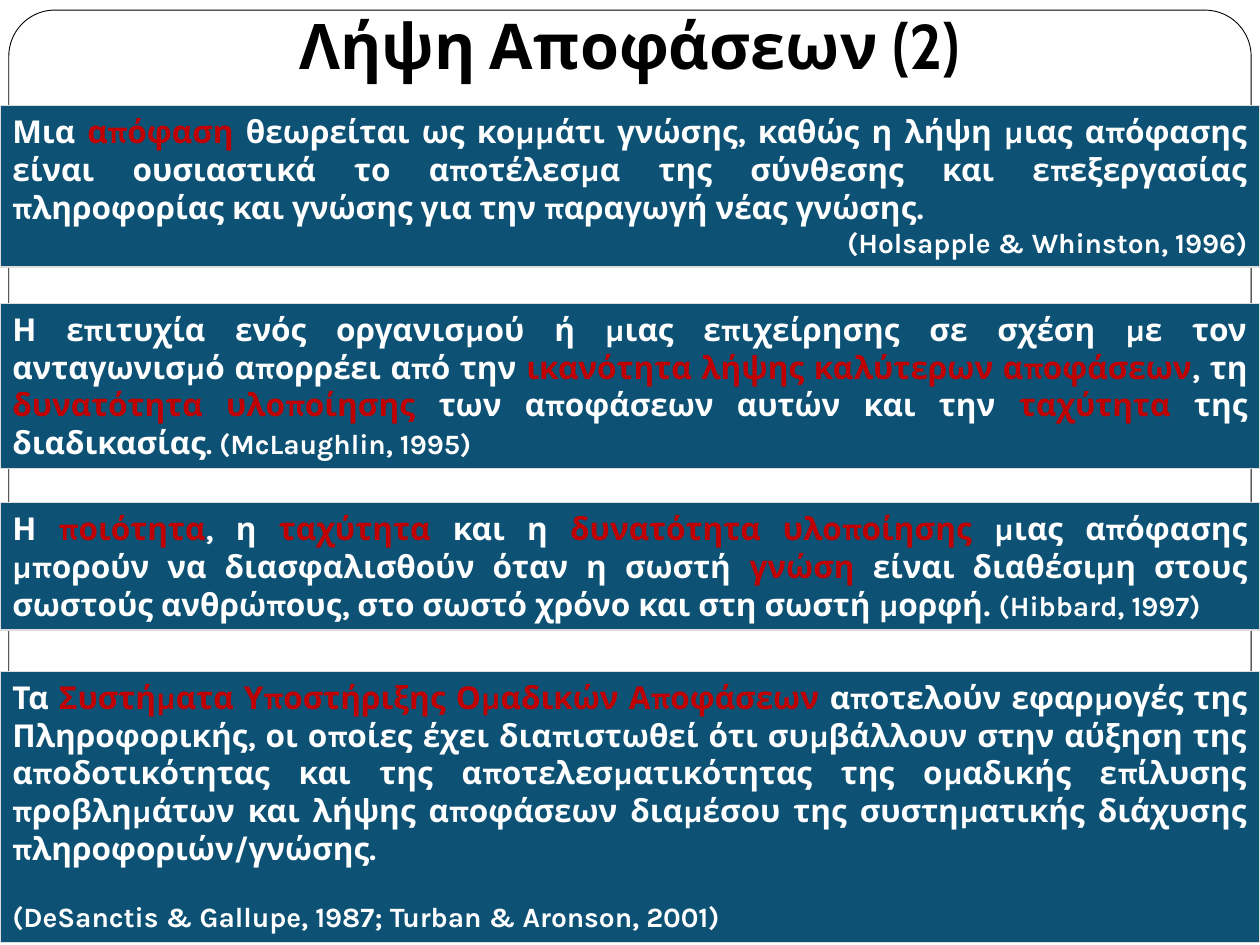
from pptx import Presentation
from pptx.dml.color import RGBColor
from pptx.enum.shapes import MSO_SHAPE
from pptx.enum.text import MSO_ANCHOR, MSO_AUTO_SIZE, PP_ALIGN
from pptx.util import Inches, Pt

BLACK = RGBColor(0x00, 0x00, 0x00)
WHITE = RGBColor(0xFF, 0xFF, 0xFF)
RED = RGBColor(0xC0, 0x00, 0x00)
BLUE = RGBColor(0x0D, 0x52, 0x75)
GREY = RGBColor(0xDD, 0xDD, 0xDD)

deck = Presentation()
deck.slide_width, deck.slide_height = Inches(10), Inches(7.5)
percent_x, percent_y = deck.slide_width / 100, deck.slide_height / 100
slide = deck.slides.add_slide(deck.slide_layouts[5])


def add_panel(kind, left, top, width, height, fill, line, weight):
    """Add a plain outlined shape, placed in percent of the slide's size."""
    panel = slide.shapes.add_shape(
        kind, round(left * percent_x), round(top * percent_y),
        round(width * percent_x), round(height * percent_y))
    panel.shadow.inherit = False
    panel.fill.solid()
    panel.fill.fore_color.rgb = fill
    panel.line.color.rgb = line
    panel.line.width = Pt(weight)
    return panel


def add_run(paragraph, text, size, color, face="Karla"):
    run = paragraph.add_run()
    run.text = text
    run.font.name = face
    run.font.size = Pt(size)
    run.font.bold = True
    run.font.color.rgb = color


# Rounded frame, sent behind the title
frame = add_panel(MSO_SHAPE.ROUNDED_RECTANGLE, 0.7, 1.07, 98.6, 97.6, WHITE, BLACK, 0.5)
frame.adjustments[0] = 0.05
slide.shapes._spTree.insert(2, frame._element)

title = slide.shapes.title
title.left, title.top = 0, round(4.27 * percent_y)
title.width, title.height = deck.slide_width, round(5.73 * percent_y)
heading = title.text_frame
heading.auto_size = MSO_AUTO_SIZE.NONE
heading.vertical_anchor = MSO_ANCHOR.BOTTOM
heading.margin_bottom = Inches(0.1)
heading.paragraphs[0].alignment = PP_ALIGN.CENTER
add_run(heading.paragraphs[0], "Λήψη Αποφάσεων (2)", 36, BLACK, "Cabin")

# Top, height, phrases (plain and highlighted in turn), citation,
# citation alignment (None keeps it in the sentence), space above it
statements = [
    (11.2, 17.07,
     ["Μια ", "απόφαση",
      " θεωρείται ως κομμάτι γνώσης, καθώς η λήψη μιας απόφασης είναι ουσιαστικά "
      "το αποτέλεσμα της σύνθεσης και επεξεργασίας πληροφορίας και γνώσης για την "
      "παραγωγή νέας γνώσης. "],
     "(Holsapple & Whinston, 1996)", PP_ALIGN.RIGHT, 0),
    (32.13, 17.47,
     ["Η επιτυχία ενός οργανισμού ή μιας επιχείρησης σε σχέση με τον ανταγωνισμό "
      "απορρέει από την ", "ικανότητα λήψης καλύτερων αποφάσεων",
      ", τη ", "δυνατότητα υλοποίησης",
      " των αποφάσεων αυτών και την ", "ταχύτητα",
      " της διαδικασίας"],
     ". (McLaughlin, 1995)", None, 0),
    (53.2, 13.47,
     ["Η ", "ποιότητα", ", η ", "ταχύτητα", " και η ", "δυνατότητα υλοποίησης",
      " μιας απόφασης μπορούν να διασφαλισθούν όταν η σωστή ", "γνώση",
      " είναι διαθέσιμη στους σωστούς ανθρώπους, στο σωστό χρόνο και στη σωστή "
      "μορφή. "],
     "(Hibbard, 1997)", None, 0),
    (71.07, 28.67,
     ["Τα ", "Συστήματα Υποστήριξης Ομαδικών Αποφάσεων ",
      "αποτελούν εφαρμογές της Πληροφορικής, οι οποίες έχει διαπιστωθεί ότι "
      "συμβάλλουν στην αύξηση της αποδοτικότητας και της αποτελεσματικότητας της "
      "ομαδικής επίλυσης προβλημάτων και λήψης αποφάσεων διαμέσου της "
      "συστηματικής διάχυσης πληροφοριών/γνώσης."],
     "(DeSanctis & Gallupe, 1987; Turban & Aronson, 2001)", PP_ALIGN.JUSTIFY, 18.7),
]

for top, height, phrases, citation, citation_align, space_above in statements:
    band = add_panel(MSO_SHAPE.RECTANGLE, 0, top, 100, height, BLUE, GREY, 0.75)
    body = band.text_frame
    body.word_wrap = True
    body.auto_size = MSO_AUTO_SIZE.SHAPE_TO_FIT_TEXT
    body.vertical_anchor = MSO_ANCHOR.TOP
    sentence = body.paragraphs[0]
    sentence.alignment = PP_ALIGN.JUSTIFY
    for position, phrase in enumerate(phrases):
        add_run(sentence, phrase, 18, RED if position % 2 else WHITE)

    source_line = sentence
    if citation_align is not None:
        source_line = body.add_paragraph()
        source_line.alignment = citation_align
        source_line.space_before = Pt(space_above)
    add_run(source_line, citation, 16, WHITE)

deck.save("out.pptx")
